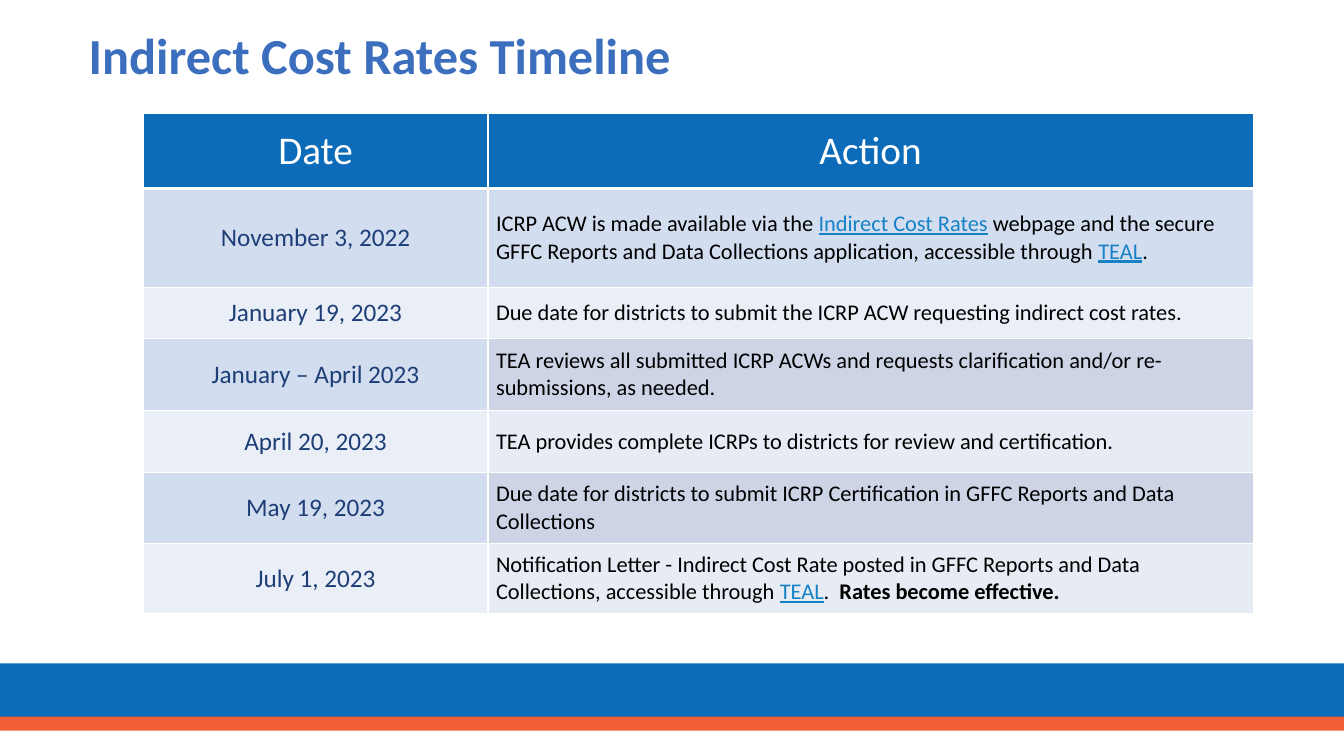
from dataclasses import dataclass

import pptx
import pptx.dml.color
import pptx.enum.shapes
import pptx.enum.text
import pptx.oxml
import pptx.oxml.ns
import pptx.util
from pptx.util import Inches

FONT = "Calibri"
COLORS = {
    "title": "3C6EBE",
    "blue": "0D6CB9",
    "orange": "F16038",
    "white": "FFFFFF",
    "black": "000000",
    "date": "1E3E77",
    "link": "1682C5",
    "band": "D2DEEF",
    "pale": "EAEFF7",
    "band_grey": "CCD4E6",
    "pale_grey": "E7EBF3",
}


@dataclass(frozen=True)
class Run:
    text: str
    color: str = "black"
    bold: bool = False
    underline: bool = False


@dataclass(frozen=True)
class Milestone:
    date: str
    action: tuple[Run, ...]
    height: float
    date_fill: str
    action_fill: str


@dataclass(frozen=True)
class Bar:
    top: float
    height: float
    color: str


def link(text: str) -> Run:
    return Run(text, "link", underline=True)


BARS = (Bar(6.58, 0.58, "blue"), Bar(7.11, 0.14, "orange"))
COLUMN_WIDTHS = (3.42, 7.59)
HEADINGS = ("Date", "Action")
HEADER_HEIGHT = 0.74
MILESTONES = (
    Milestone("November 3, 2022", (
        Run("ICRP ACW is made available via the "),
        link("Indirect Cost Rates"),
        Run(" webpage and the secure GFFC Reports and Data Collections "
            "application, accessible through "),
        link("TEAL"),
        Run("."),
    ), 0.98, "band", "band"),
    Milestone("January 19, 2023", (
        Run("Due date for districts to submit the ICRP ACW requesting "
            "indirect cost rates."),
    ), 0.51, "pale", "pale"),
    Milestone("January – April 2023", (
        Run("TEA reviews all submitted ICRP ACWs and requests clarification "
            "and/or re-submissions, as needed."),
    ), 0.71, "band", "band_grey"),
    Milestone("April 20, 2023", (
        Run("TEA provides complete ICRPs to districts for review and "
            "certification."),
    ), 0.62, "pale", "pale_grey"),
    Milestone("May 19, 2023", (
        Run("Due date for districts to submit ICRP Certification in GFFC "
            "Reports and Data Collections"),
    ), 0.7, "band", "band_grey"),
    Milestone("July 1, 2023", (
        Run("Notification Letter - Indirect Cost Rate posted in GFFC Reports "
            "and Data Collections, accessible through "),
        link("TEAL"),
        Run(".  "),
        Run("Rates become effective.", bold=True),
    ), 0.7, "pale", "pale_grey"),
)


def rgb(name: str) -> pptx.dml.color.RGBColor:
    return pptx.dml.color.RGBColor.from_string(COLORS[name])


def add_run(p, run: Run, size: float) -> None:
    r = p.add_run()
    r.text = run.text
    r.font.name = FONT
    r.font.size = pptx.util.Pt(size)
    r.font.bold = run.bold
    r.font.underline = run.underline
    r.font.color.rgb = rgb(run.color)


def set_borders(cell, bottom: float) -> None:
    """Draw white 1 pt borders, with the bottom one of the given width."""
    tc_pr = cell._tc.get_or_add_tcPr()
    widths = {"lnL": 1, "lnR": 1, "lnT": 1, "lnB": bottom}
    for position, (tag, width) in enumerate(widths.items()):
        ln = pptx.oxml.parse_xml(
            f'<a:{tag} {pptx.oxml.ns.nsdecls("a")} w="{pptx.util.Pt(width)}">'
            f'<a:solidFill><a:srgbClr val="{COLORS["white"]}"/></a:solidFill>'
            f'</a:{tag}>')
        tc_pr.insert(position, ln)


def fill_cell(cell, runs: tuple[Run, ...], size: float, fill: str,
              centred: bool = True, bottom: float = 1):
    cell.fill.solid()
    cell.fill.fore_color.rgb = rgb(fill)
    set_borders(cell, bottom)
    cell.margin_left = cell.margin_right = Inches(0.08)
    cell.margin_top = cell.margin_bottom = 0
    cell.vertical_anchor = pptx.enum.text.MSO_ANCHOR.MIDDLE
    p = cell.text_frame.paragraphs[0]
    align = pptx.enum.text.PP_ALIGN
    p.alignment = align.CENTER if centred else align.LEFT
    if not centred:
        p.space_after = pptx.util.Pt(2)
    for run in runs:
        add_run(p, run, size)


def add_bar(slide, bar: Bar, width: int) -> None:
    sp = slide.shapes.add_shape(
        pptx.enum.shapes.MSO_SHAPE.RECTANGLE,
        0, Inches(bar.top), width, Inches(bar.height))
    sp.shadow.inherit = False
    sp.fill.solid()
    sp.fill.fore_color.rgb = rgb(bar.color)
    sp.line.fill.background()


def add_title(slide) -> None:
    title = slide.shapes.title
    title.left, title.top = Inches(0.78), Inches(0.17)
    title.width, title.height = Inches(12.16), Inches(0.82)
    tf = title.text_frame
    tf.vertical_anchor = pptx.enum.text.MSO_ANCHOR.MIDDLE
    p = tf.paragraphs[0]
    p.alignment = pptx.enum.text.PP_ALIGN.LEFT
    p.line_spacing = 0.9
    add_run(p, Run("Indirect Cost Rates Timeline", "title", bold=True), 36)


def add_timeline(slide) -> None:
    heights = [HEADER_HEIGHT] + [m.height for m in MILESTONES]
    table = slide.shapes.add_table(
        len(heights), len(COLUMN_WIDTHS), Inches(1.42), Inches(1.13),
        Inches(sum(COLUMN_WIDTHS)), Inches(sum(heights))).table
    for column, width in zip(table.columns, COLUMN_WIDTHS):
        column.width = Inches(width)
    for row, height in zip(table.rows, heights):
        row.height = Inches(height)
    for col, heading in enumerate(HEADINGS):
        fill_cell(table.cell(0, col), (Run(heading, "white"),), 28, "blue",
                  bottom=3)
    for row, m in enumerate(MILESTONES, start=1):
        fill_cell(table.cell(row, 0), (Run(m.date, "date"),), 18, m.date_fill)
        fill_cell(table.cell(row, 1), m.action, 16, m.action_fill,
                  centred=False)


def main() -> None:
    prs = pptx.Presentation()
    prs.slide_width, prs.slide_height = Inches(13.33), Inches(7.5)
    slide = prs.slides.add_slide(prs.slide_layouts.get_by_name("Title Only"))
    for bar in BARS:
        add_bar(slide, bar, prs.slide_width)
    add_title(slide)
    add_timeline(slide)
    prs.save("out.pptx")


if __name__ == "__main__":
    main()
